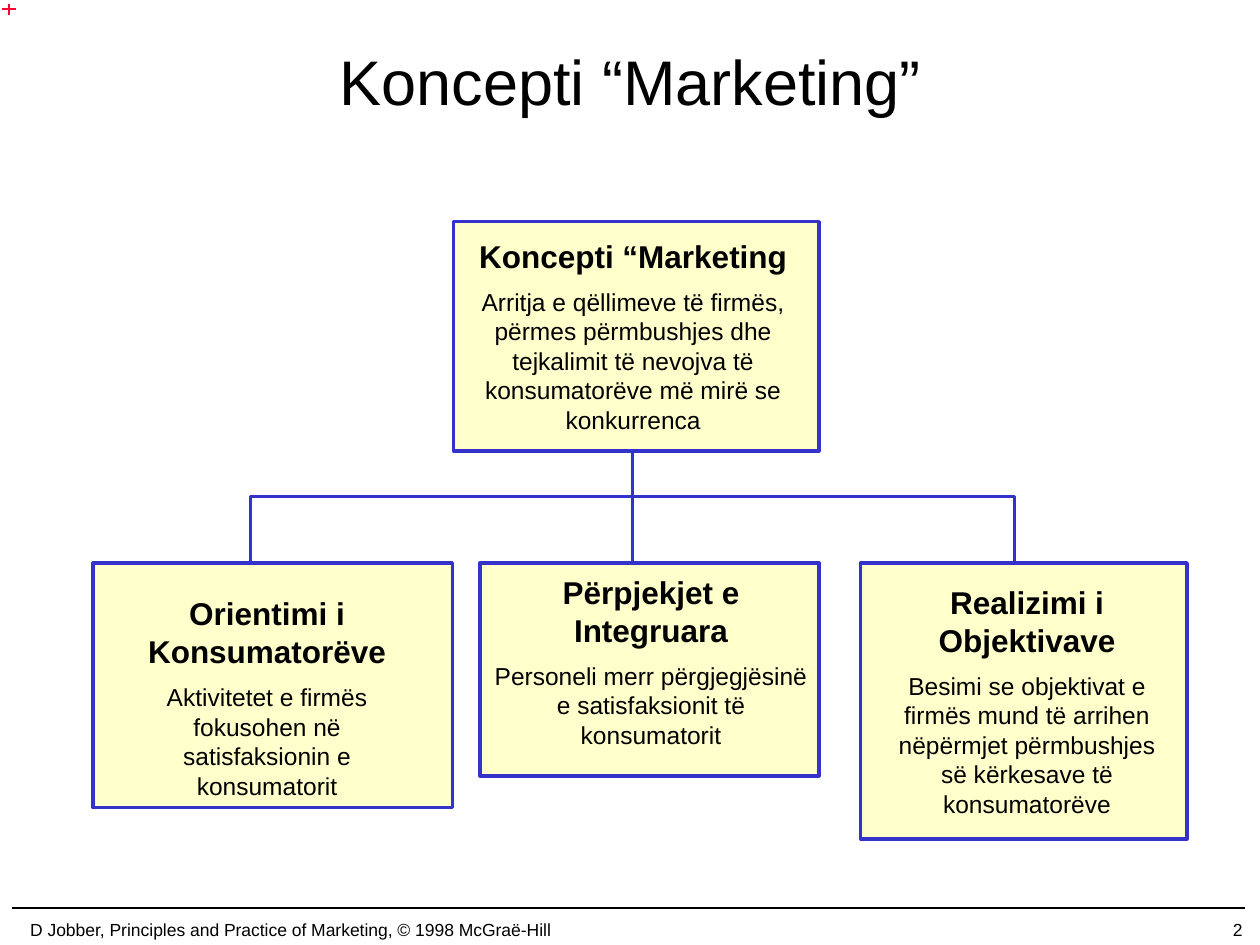
import pptx
import pptx.dml.color
import pptx.enum.shapes
import pptx.enum.text
import pptx.oxml
import pptx.util
from pptx.util import Cm

ALIGN = pptx.enum.text.PP_ALIGN
ANCHOR = pptx.enum.text.MSO_ANCHOR
BLUE, CREAM, BLACK, RED = "3333CC", "FFFFCC", "000000", "FF0033"


def color(hex_code):
    return pptx.dml.color.RGBColor.from_string(hex_code)


class ChartSlide:
    """Holds the slide and the style shared by its elements."""

    font = "Arial"
    heading_size, body_size, footer_size = 18, 14, 10
    paragraph_gap = 7

    def __init__(self, slide):
        self.shapes = slide.shapes

    def outline(self, shape, hex_code, width):
        shape.line.color.rgb = color(hex_code)
        shape.line.width = pptx.util.Pt(width)

    def line(self, x1, y1, x2, y2, hex_code, width):
        connector = self.shapes.add_connector(
            pptx.enum.shapes.MSO_CONNECTOR.STRAIGHT, Cm(x1), Cm(y1), Cm(x2), Cm(y2))
        self.outline(connector, hex_code, width)
        properties = connector._element.spPr
        properties.append(pptx.oxml.parse_xml(
            '<a:effectLst xmlns:a="http://schemas.openxmlformats.org/drawingml/2006/main"/>'))

    def bracket(self, points):
        """Draw an open, unfilled path through the points."""
        start, *rest = [(Cm(x), Cm(y)) for x, y in points]
        builder = self.shapes.build_freeform(*start)
        builder.add_line_segments(rest, close=False)
        shape = builder.convert_to_shape()
        shape.fill.background()
        shape.shadow.inherit = False
        self.outline(shape, BLUE, 2)

    def box(self, area):
        shape = self.shapes.add_shape(
            pptx.enum.shapes.MSO_SHAPE.RECTANGLE, *map(Cm, area))
        shape.shadow.inherit = False
        shape.fill.solid()
        shape.fill.fore_color.rgb = color(CREAM)
        self.outline(shape, BLUE, 2)

    def text(self, area, lines, align=ALIGN.CENTER, anchor=ANCHOR.MIDDLE, wrap=True):
        """Add a text box; lines holds (wording, size, bold) per paragraph."""
        frame = self.shapes.add_textbox(*map(Cm, area)).text_frame
        frame.word_wrap = wrap
        frame.vertical_anchor = anchor
        frame.text = "\n".join(wording for wording, _, _ in lines)
        for index, (paragraph, (_, size, bold)) in enumerate(zip(frame.paragraphs, lines)):
            paragraph.alignment = align
            if index:
                paragraph.space_before = pptx.util.Pt(self.paragraph_gap)
            for run in paragraph.runs:
                run.font.name = self.font
                run.font.size = pptx.util.Pt(size)
                run.font.bold = bold
                run.font.color.rgb = color(BLACK)
        return frame

    def description(self, area, heading, body):
        frame = self.text(area, [(heading, self.heading_size, True),
                                 (body, self.body_size, False)], anchor=ANCHOR.TOP)
        frame.auto_size = pptx.enum.text.MSO_AUTO_SIZE.SHAPE_TO_FIT_TEXT

    def footer(self, left, width, wording, align):
        self.text((left, 18.42, width, 0.64), [(wording, self.footer_size, False)],
                  align, wrap=False)


def main():
    deck = pptx.Presentation()
    deck.slide_width, deck.slide_height = Cm(25.4), Cm(19.05)
    chart = ChartSlide(deck.slides.add_slide(deck.slide_layouts[6]))

    chart.line(0.25, 18.31, 25.1, 18.31, BLACK, 1)
    chart.footer(20.02, 5.28, "2", ALIGN.RIGHT)
    chart.footer(0, 11.71,
                 "D Jobber, Principles and Practice of Marketing, © 1998 McGraë-Hill",
                 ALIGN.CENTER)

    chart.line(12.75, 8.43, 12.75, 11.48, BLUE, 2)
    chart.box((9.14, 4.47, 7.37, 4.62))
    chart.description(
        (8.97, 4.65, 7.59, 4.32), "Koncepti “Marketing",
        "Arritja e qëllimeve të firmës, përmes përmbushjes dhe tejkalimit "
        "të nevojva të konsumatorëve më mirë se konkurrenca")
    chart.bracket([(5.05, 11.43), (5.05, 10.01), (20.45, 10.01), (20.45, 11.33)])
    chart.text((1.91, 0.03, 21.59, 3.18), [("Koncepti “Marketing”", 36, False)])

    branch_top = 11.35
    branches = [
        (1.88, 7.24, 4.93, (2.11, 11.86, 6.55, 3.89), "Orientimi i Konsumatorëve",
         "Aktivitetet e firmës fokusohen në satisfaksionin e konsumatorit"),
        (9.68, 6.83, 4.29, (9.53, 11.43, 7.19, 3.28), "Përpjekjet e Integruara",
         "Personeli merr përgjegjësinë e satisfaksionit të konsumatorit"),
        (17.35, 6.58, 5.56, (17.58, 11.63, 6.25, 5.08), "Realizimi i Objektivave",
         "Besimi se objektivat e firmës mund të arrihen nëpërmjet "
         "përmbushjes së kërkesave të konsumatorëve"),
    ]
    for left, width, height, text_area, heading, body in branches:
        chart.box((left, branch_top, width, height))
        chart.description(text_area, heading, body)

    chart.line(0.18, 0.08, 0.18, 0.3, RED, 1)
    chart.line(0.33, 0.18, 0.05, 0.18, RED, 1)

    deck.save("out.pptx")


if __name__ == "__main__":
    main()
